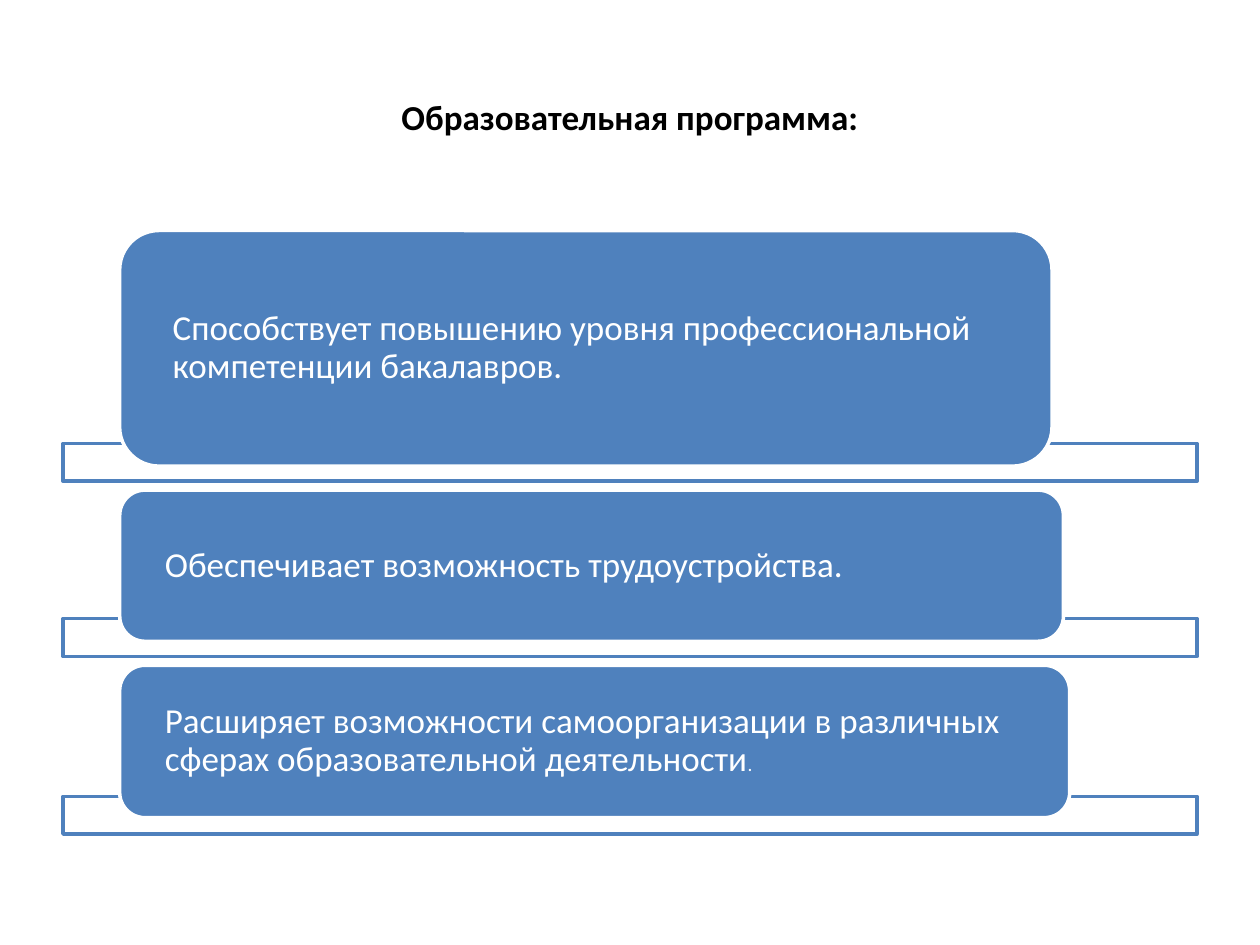
from pptx import Presentation
from pptx.dml.color import RGBColor
from pptx.enum import shapes, text
from pptx.util import Inches, Pt

COLORS = {"blue": "4F81BD", "white": "FFFFFF", "black": "000000"}

deck = Presentation()
deck.slide_width, deck.slide_height = Inches(10), Inches(7.5)
page = deck.slides.add_slide(deck.slide_layouts[6])


def color(name):
    return RGBColor.from_string(COLORS[name])


def add_box(kind, left, top, width, height, fill, line):
    box = page.shapes.add_shape(
        kind, Inches(left), Inches(top), Inches(width), Inches(height))
    box.shadow.inherit = False
    box.fill.solid()
    box.fill.fore_color.rgb = color(fill)
    box.line.color.rgb = color(line)
    box.line.width = Pt(2)
    return box


# Title
title = page.shapes.add_textbox(Inches(0.5), Inches(0.3), Inches(9), Inches(1.25))
title.text_frame.word_wrap = True
title.text_frame.vertical_anchor = text.MSO_ANCHOR.MIDDLE
para = title.text_frame.paragraphs[0]
para.text = "Образовательная программа:"
para.alignment = text.PP_ALIGN.CENTER
para.font.name, para.font.size, para.font.bold = "Calibri", Pt(20), True
para.font.color.rgb = color("black")

# Benefits: top, width, height, inset, bar top, text, small closing mark
benefits = [
    (1.83, 7.4, 1.87, 0.33, 3.52,
     "Способствует повышению уровня профессиональной компетенции бакалавров.", ""),
    (3.89, 7.49, 1.2, 0.3, 4.91,
     "Обеспечивает возможность трудоустройства.", ""),
    (5.28, 7.54, 1.21, 0.3, 6.32,
     "Расширяет возможности самоорганизации в различных сферах "
     "образовательной деятельности", "."),
]
for top, width, height, inset, bar_top, wording, mark in benefits:
    # Outlined bar behind the rounded box
    add_box(shapes.MSO_SHAPE.RECTANGLE, 0.5, bar_top, 9, 0.3, "white", "blue")

    # Rounded box with its text
    box = add_box(shapes.MSO_SHAPE.ROUNDED_RECTANGLE,
                  0.95, top, width, height, "blue", "white")
    frame = box.text_frame
    frame.word_wrap = True
    frame.vertical_anchor = text.MSO_ANCHOR.MIDDLE
    frame.margin_left = frame.margin_right = Inches(inset)
    frame.margin_top = frame.margin_bottom = 0
    para = frame.paragraphs[0]
    para.text = wording
    para.alignment = text.PP_ALIGN.LEFT
    para.line_spacing = 0.9
    para.font.name, para.font.size = "Calibri", Pt(20)
    para.font.color.rgb = color("white")
    if mark:
        span = para.add_run()
        span.text = mark
        span.font.size = Pt(11)

deck.save("out.pptx")
